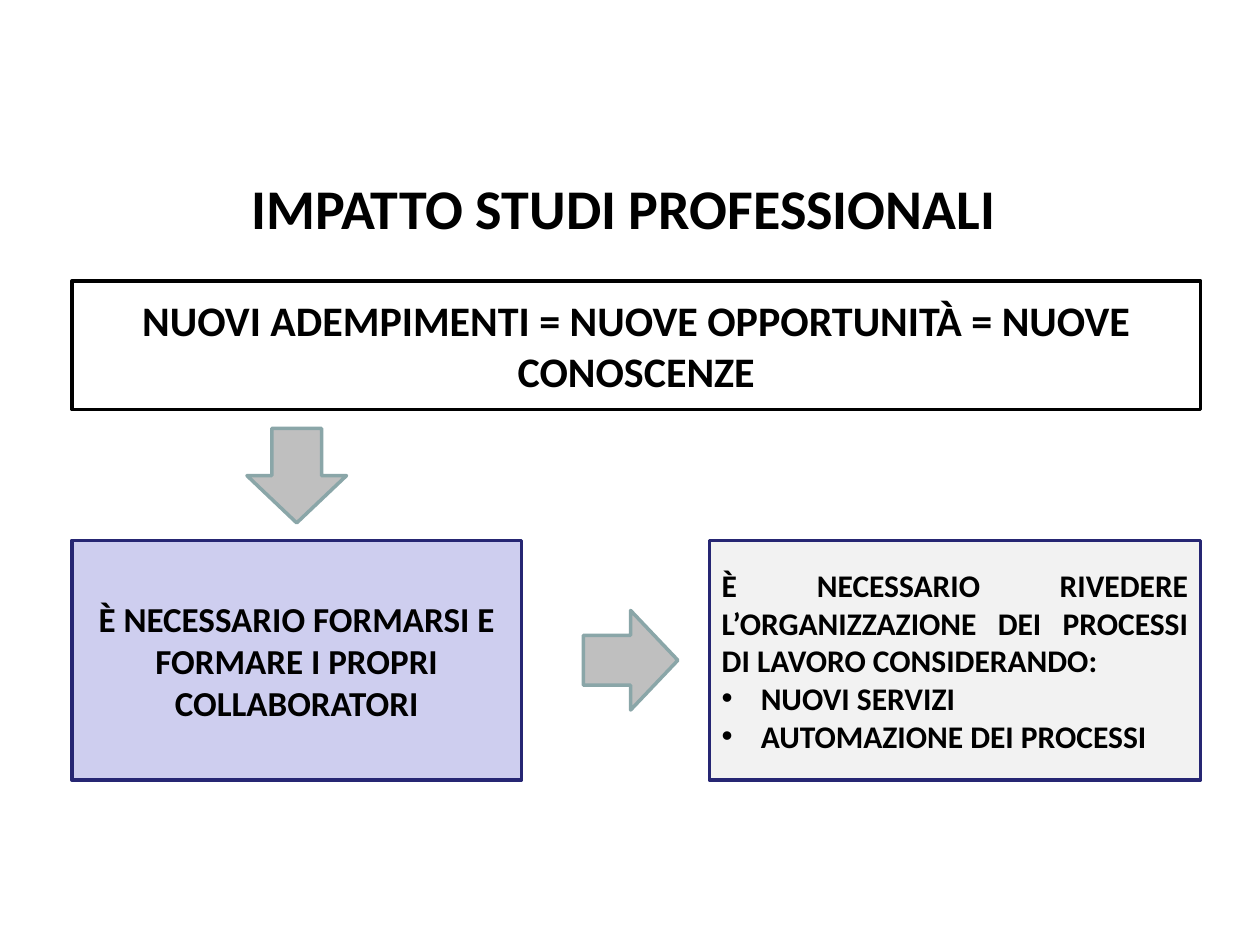
from dataclasses import dataclass

from lxml.etree import SubElement
from pptx import Presentation
from pptx.dml.color import RGBColor
from pptx.enum.shapes import MSO_SHAPE as Preset
from pptx.enum.text import MSO_ANCHOR as Anchor, PP_ALIGN as Align
from pptx.oxml.ns import qn
from pptx.util import Inches, Pt


@dataclass(frozen=True)
class Theme:
    font: str = "Calibri"
    text: str = "000000"
    white: str = "FFFFFF"
    navy: str = "262673"
    lavender: str = "CECEEF"
    pale_gray: str = "F2F2F2"
    arrow_fill: str = "BFBFBF"
    arrow_line: str = "8AA6A8"
    line_width: float = 2
    title_size: int = 32
    banner_size: int = 24
    training_size: int = 20
    process_size: int = 18
    bullet_indent: float = 0.31


@dataclass(frozen=True)
class Block:
    left: float
    top: float
    width: float
    height: float
    fill: str
    line: str
    preset: Preset = Preset.RECTANGLE
    rotation: int = 0
    text: str = ""
    size: int = 0
    align: Align = Align.CENTER
    bullets: tuple[str, ...] = ()


THEME = Theme()
LEFT, RIGHT = 0.57, 9.53
ROW_TOP, ROW_HEIGHT = 4.29, 1.9
TRAINING_WIDTH, PROCESS_WIDTH = 3.57, 3.9
ARROW_WIDTH, ARROW_HEIGHT = 0.79, 0.75


def format_paragraph(para, size: int, align: Align) -> None:
    para.alignment = align
    for span in para.runs:
        span.font.name = THEME.font
        span.font.size = Pt(size)
        span.font.bold = True
        span.font.color.rgb = RGBColor.from_string(THEME.text)


def add_bullet(para) -> None:
    properties = para._p.get_or_add_pPr()
    indent = Inches(THEME.bullet_indent)
    properties.set("marL", str(indent))
    properties.set("indent", str(-indent))
    SubElement(properties, qn("a:buFont"), typeface="Arial")
    SubElement(properties, qn("a:buChar"), char="•")


def draw_block(page, block: Block) -> None:
    box = page.shapes.add_shape(
        block.preset, Inches(block.left), Inches(block.top),
        Inches(block.width), Inches(block.height))
    box.rotation = block.rotation
    box.shadow.inherit = False
    box.fill.solid()
    box.fill.fore_color.rgb = RGBColor.from_string(block.fill)
    box.line.color.rgb = RGBColor.from_string(block.line)
    box.line.width = Pt(THEME.line_width)
    if not block.text:
        return
    frame = box.text_frame
    frame.word_wrap = True
    frame.vertical_anchor = Anchor.MIDDLE
    frame.text = "\n".join((block.text, *block.bullets))
    for para in frame.paragraphs[1:]:
        add_bullet(para)
    for para in frame.paragraphs:
        format_paragraph(para, block.size, block.align)


def draw_title(page, text: str) -> None:
    title = page.shapes.title
    title.left, title.top = Inches(0), Inches(1.34)
    title.width, title.height = Inches(10), Inches(0.6)
    frame = title.text_frame
    frame.text = text
    frame.word_wrap = True
    frame.vertical_anchor = Anchor.MIDDLE
    format_paragraph(frame.paragraphs[0], THEME.title_size, Align.CENTER)


def main() -> None:
    deck = Presentation()
    deck.slide_width, deck.slide_height = Inches(10), Inches(7.5)
    page = deck.slides.add_slide(deck.slide_layouts[5])
    draw_title(page, "IMPATTO STUDI PROFESSIONALI ")

    banner = Block(
        LEFT, 2.23, RIGHT - LEFT, 1.02, THEME.white, THEME.text,
        text="NUOVI ADEMPIMENTI = NUOVE OPPORTUNITÀ = NUOVE CONOSCENZE",
        size=THEME.banner_size)
    training = Block(
        LEFT, ROW_TOP, TRAINING_WIDTH, ROW_HEIGHT, THEME.lavender, THEME.navy,
        text="È NECESSARIO FORMARSI E FORMARE I PROPRI COLLABORATORI",
        size=THEME.training_size)
    processes = Block(
        RIGHT - PROCESS_WIDTH, ROW_TOP, PROCESS_WIDTH, ROW_HEIGHT,
        THEME.pale_gray, THEME.navy,
        text="È NECESSARIO RIVEDERE L’ORGANIZZAZIONE DEI PROCESSI "
             "DI LAVORO CONSIDERANDO:",
        size=THEME.process_size, align=Align.JUSTIFY,
        bullets=("NUOVI SERVIZI", "AUTOMAZIONE DEI PROCESSI"))
    down_arrow = Block(
        LEFT + (TRAINING_WIDTH - ARROW_WIDTH) / 2, 3.4,
        ARROW_WIDTH, ARROW_HEIGHT, THEME.arrow_fill, THEME.arrow_line,
        Preset.DOWN_ARROW)
    right_arrow = Block(
        4.61, ROW_TOP + (ROW_HEIGHT - ARROW_HEIGHT) / 2,
        ARROW_WIDTH, ARROW_HEIGHT, THEME.arrow_fill, THEME.arrow_line,
        Preset.DOWN_ARROW, rotation=270)

    for block in (banner, down_arrow, training, right_arrow, processes):
        draw_block(page, block)
    deck.save("out.pptx")


if __name__ == "__main__":
    main()
